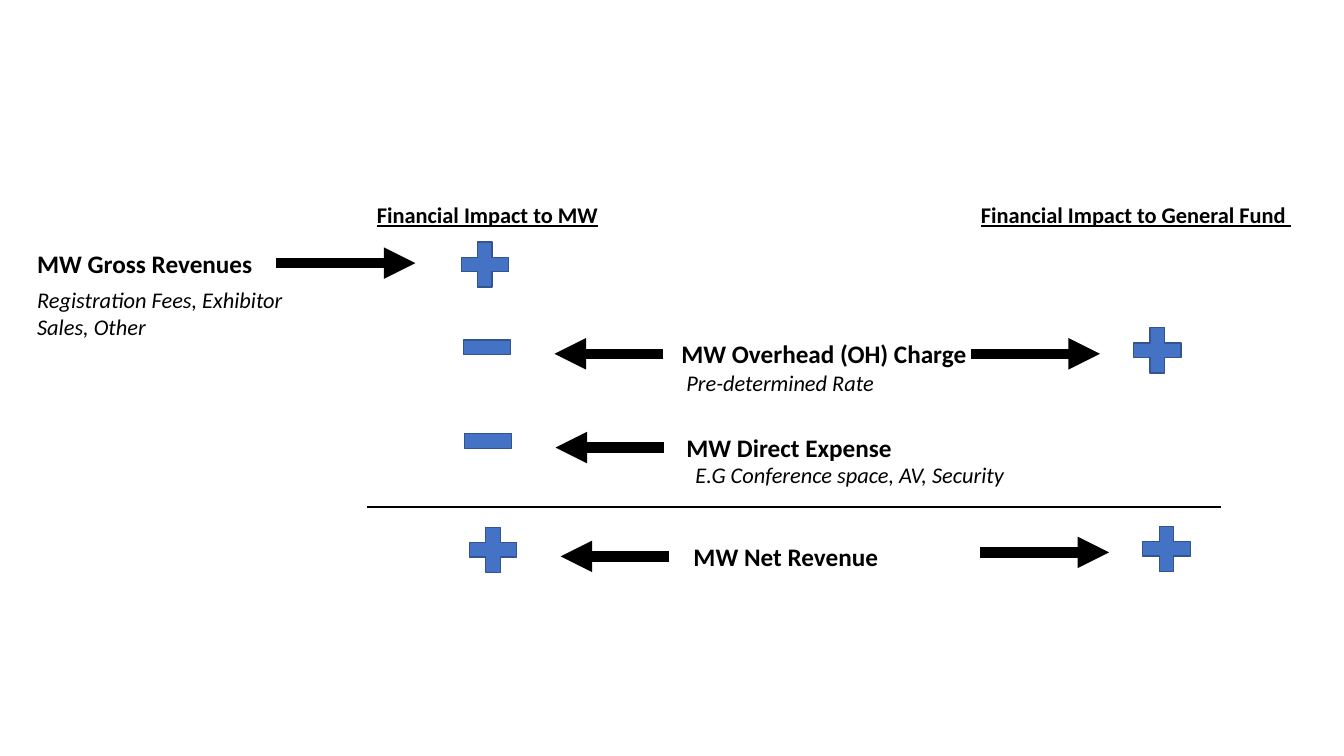
from dataclasses import dataclass
from lxml import etree
from pptx import Presentation
from pptx.dml.color import RGBColor as RGB
from pptx.enum.shapes import MSO_CONNECTOR as Link, MSO_SHAPE as Shape
from pptx.oxml.ns import qn
from pptx.util import Inches, Pt


@dataclass(frozen=True)
class Theme:
    font: str = "Calibri"
    ink: RGB = RGB(0x00, 0x00, 0x00)
    fill: RGB = RGB(0x44, 0x72, 0xC4)
    edge: RGB = RGB(0x32, 0x54, 0x91)
    label: int = 18
    note: int = 16
    arrow: float = 7.5
    rule: float = 2


THEME = Theme()
PLUS, MINUS = Shape.MATH_PLUS, Shape.MATH_MINUS


def write(slide, text, x, y, w, h=0.4, size=THEME.label, **style):
    box = slide.shapes.add_textbox(Inches(x), Inches(y), Inches(w), Inches(h))
    box.text_frame.word_wrap = True
    run = box.text_frame.paragraphs[0].add_run()
    run.text = text
    font = run.font
    font.name, font.size, font.color.rgb = THEME.font, Pt(size), THEME.ink
    for key, value in style.items():
        setattr(font, key, value)


def note(slide, text, x, y, w, h=0.37):
    write(slide, text, x, y, w, h, size=THEME.note, italic=True)


def line(slide, x, end, y, width=THEME.arrow, head=True):
    link = slide.shapes.add_connector(
        Link.STRAIGHT, Inches(x), Inches(y), Inches(end), Inches(y))
    link.line.color.rgb, link.line.width = THEME.ink, Pt(width)
    if head:
        etree.SubElement(link.line._get_or_add_ln(), qn("a:tailEnd"), type="triangle")
    etree.SubElement(link._element.spPr, qn("a:effectLst"))


def sign(slide, kind, x, y):
    mark = slide.shapes.add_shape(kind, Inches(x), Inches(y), Inches(0.64), Inches(0.61))
    mark.shadow.inherit = False
    mark.fill.solid()
    mark.fill.fore_color.rgb = THEME.fill
    mark.line.color.rgb, mark.line.width = THEME.edge, Pt(1)


def heads(slide, y):
    for text, x, w in (("Financial Impact to MW", 3.64, 2.41),
                       ("Financial Impact to General Fund ", 9.63, 3.66)):
        write(slide, text, x, y, w, 0.37, size=THEME.note, bold=True, underline=True)


def gross(slide, x, y):
    """Income flowing right into the MW column."""
    write(slide, "MW Gross Revenues", x, y - 0.2, 2.92, bold=True)
    note(slide, "Registration Fees, Exhibitor Sales, Other", x, y + 0.18, 3.09, 0.64)
    line(slide, x + 2.47, x + 3.85, y)
    sign(slide, PLUS, x + 4.22, y - 0.29)


def impact(slide, x, y, kind, text, gap):
    """Sign in the MW column, fed by an arrow from its label."""
    sign(slide, kind, x, y - 0.37)
    line(slide, x + 2.07, x + 0.99, y)
    write(slide, text, x + gap, y - 0.2, 3.43, bold=True)


def fund(slide, x, y):
    """Arrow to a plus in the General Fund column."""
    line(slide, x, x + 1.28, y)
    sign(slide, PLUS, x + 1.53, y - 0.34)


def main():
    deck = Presentation()
    deck.slide_width, deck.slide_height = Inches(13.33), Inches(7.5)
    slide = deck.slides.add_slide(deck.slide_layouts[6])

    # Column heads and income
    heads(slide, 1.95)
    gross(slide, 0.27, 2.61)

    # Overhead and direct expense
    impact(slide, 4.51, 3.51, MINUS, "MW Overhead (OH) Charge", 2.15)
    note(slide, "Pre-determined Rate", 6.71, 3.61, 3.09)
    fund(slide, 9.63, 3.51)
    impact(slide, 4.52, 4.44, MINUS, "MW Direct Expense", 2.19)
    note(slide, "E.G Conference space, AV, Security", 6.8, 4.53, 4.36)

    # Net result under the rule
    line(slide, 3.64, 12.11, 5.03, width=THEME.rule, head=False)
    impact(slide, 4.57, 5.52, PLUS, "MW Net Revenue", 2.21)
    fund(slide, 9.72, 5.48)

    deck.save("out.pptx")


if __name__ == "__main__":
    main()
